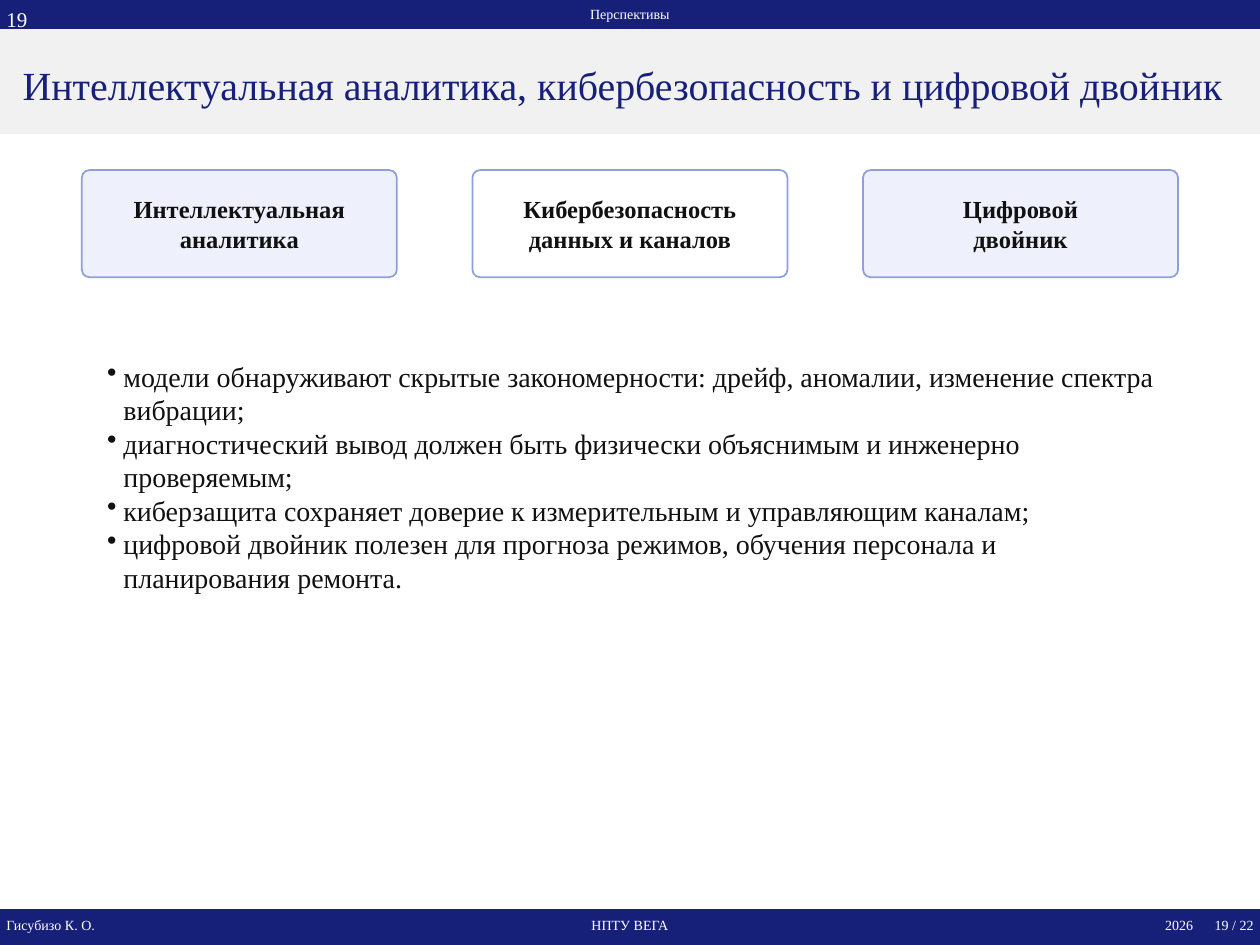
from lxml import etree
from pptx import Presentation
from pptx.dml.color import RGBColor
from pptx.enum.shapes import MSO_SHAPE
from pptx.enum.text import MSO_ANCHOR, PP_ALIGN
from pptx.oxml.ns import qn
from pptx.util import Inches, Pt

RECT, ROUNDED = MSO_SHAPE.RECTANGLE, MSO_SHAPE.ROUNDED_RECTANGLE
LEFT, CENTER, RIGHT = PP_ALIGN.LEFT, PP_ALIGN.CENTER, PP_ALIGN.RIGHT
TOP, MIDDLE = MSO_ANCHOR.TOP, MSO_ANCHOR.MIDDLE
FONT = "Times New Roman"
COLORS = {
    "navy": "172078",
    "band": "F1F1F1",
    "tint": "EEF1FB",
    "edge": "8FA0D8",
    "ink": "111111",
    "white": "FFFFFF",
}
CARDS = [
    (["Интеллектуальная", "аналитика"], "tint"),
    (["Кибербезопасность", "данных и каналов"], "white"),
    (["Цифровой", "двойник"], "tint"),
]
POINTS = [
    "модели обнаруживают скрытые закономерности: дрейф, аномалии, изменение спектра вибрации;",
    "диагностический вывод должен быть физически объяснимым и инженерно проверяемым;",
    "киберзащита сохраняет доверие к измерительным и управляющим каналам;",
    "цифровой двойник полезен для прогноза режимов, обучения персонала и планирования ремонта.",
]
FOOTER = [
    ("Гисубизо К. О.", 0.05, 2.4, LEFT),
    ("НПТУ ВЕГА", 3.85, 2.3, CENTER),
    ("2026", 8.47, 1, RIGHT),
    ("19 / 22", 9.55, 0.4, RIGHT),
]


def color(name):
    """Return the palette colour with this name."""
    return RGBColor.from_string(COLORS[name])


def write(shape, lines, size, ink, align=LEFT, anchor=MIDDLE, bold=False, inset=0, wrap=True):
    """Fill a shape with one paragraph per line."""
    frame = shape.text_frame
    frame.word_wrap = wrap
    frame.vertical_anchor = anchor
    frame.margin_left = frame.margin_right = Inches(inset)
    frame.margin_top = frame.margin_bottom = Inches(inset)
    for index, line in enumerate(lines):
        para = frame.paragraphs[0] if index == 0 else frame.add_paragraph()
        para.alignment = align
        span = para.add_run()
        span.text = line
        span.font.name = FONT
        span.font.size = Pt(size)
        span.font.bold = bold
        span.font.color.rgb = color(ink)


def add_text(page, area, lines, size, ink, **style):
    """Add a text box and return it."""
    box = page.shapes.add_textbox(*map(Inches, area))
    write(box, lines, size, ink, **style)
    return box


def add_panel(page, kind, area, fill, edge):
    """Add a filled, outlined shape and return it."""
    panel = page.shapes.add_shape(kind, *map(Inches, area))
    panel.shadow.inherit = False
    panel.fill.solid()
    panel.fill.fore_color.rgb = color(fill)
    panel.line.color.rgb = color(edge)
    panel.line.width = Pt(1)
    return panel


def add_card(page, column, lines, fill):
    """Add one rounded topic card in its column."""
    card = add_panel(page, ROUNDED, (0.65 + 3.1 * column, 1.35, 2.5, 0.85), fill, "edge")
    card.adjustments[0] = 0.07
    write(card, lines, 14, "ink", align=CENTER, bold=True, inset=0.08)


def add_bullets(page, area, lines):
    """Add a bulleted list with a narrow hanging indent."""
    box = add_text(page, area, lines, 16, "ink", anchor=TOP)
    hang = Inches(0.13)
    for para in box.text_frame.paragraphs:
        props = para._p.get_or_add_pPr()
        props.set("marL", str(hang))
        props.set("indent", str(-hang))
        etree.SubElement(props, qn("a:buChar")).set("char", "•")


def main():
    """Build the slide and save it."""
    deck = Presentation()
    deck.slide_width, deck.slide_height = Inches(10), Inches(7.5)
    page = deck.slides.add_slide(deck.slide_layouts[6])

    for top, height, fill in [(0, 0.24, "navy"), (0.24, 0.82, "band"), (7.22, 0.28, "navy")]:
        add_panel(page, RECT, (0, top, 10, height), fill, fill)
    add_text(page, (0.2, 0.04, 9.6, 0.14), ["Перспективы"], 8, "white", align=CENTER)
    title = "Интеллектуальная аналитика, кибербезопасность и цифровой двойник"
    add_text(page, (0.18, 0.36, 9.6, 0.62), [title], 22.8, "navy")
    for label, left, width, align in FOOTER:
        add_text(page, (left, 7.27, width, 0.14), [label], 8, "white", align=align)

    for column, (lines, fill) in enumerate(CARDS):
        add_card(page, column, lines, fill)
    add_bullets(page, (0.85, 2.85, 8.4, 2.9), POINTS)
    add_text(page, (0, 0, 0.28, 0.3), ["19"], 12, "white", anchor=TOP, inset=0.05, wrap=False)

    deck.save("out.pptx")


if __name__ == "__main__":
    main()
